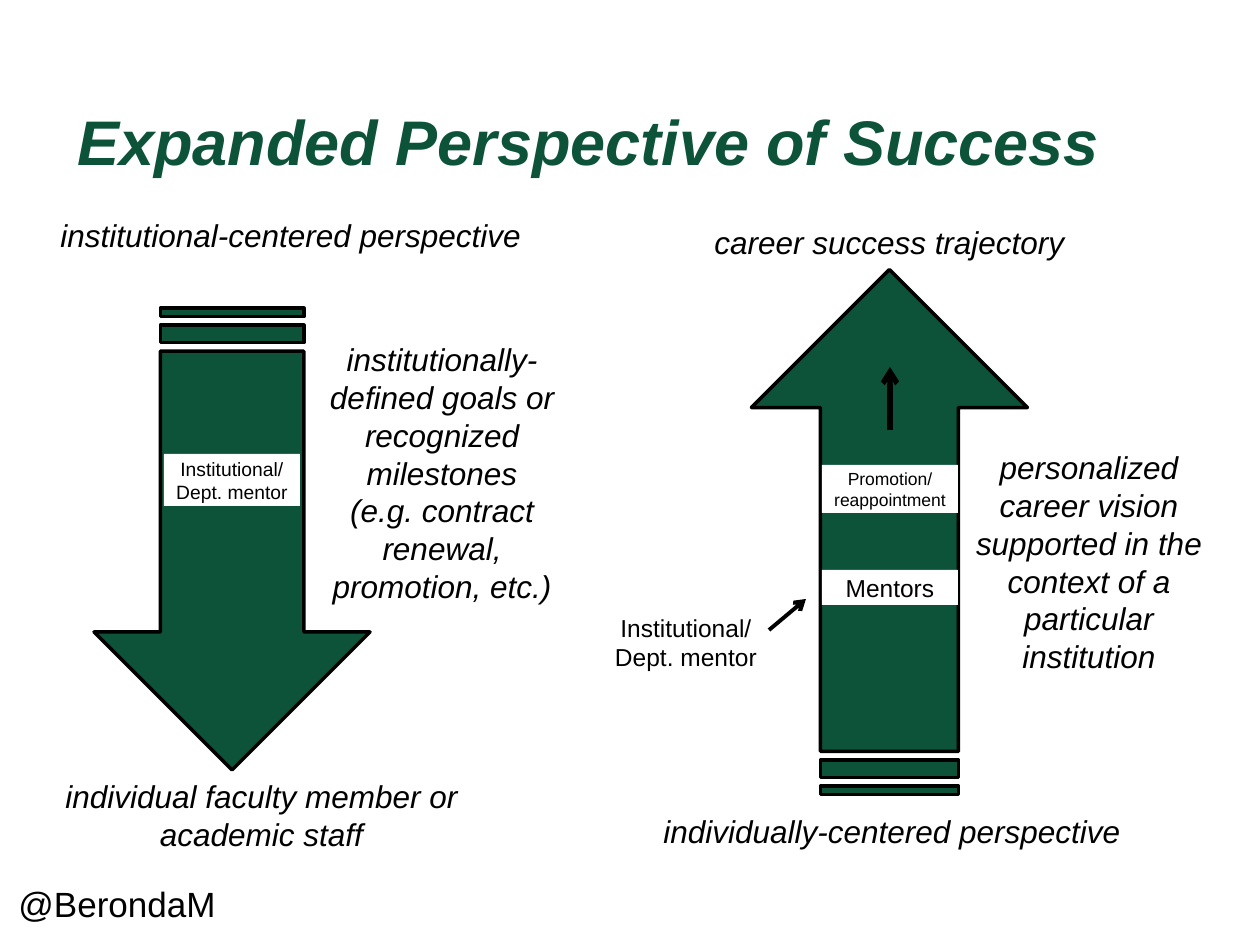
from lxml.etree import SubElement
from pptx import Presentation
from pptx.dml.color import RGBColor
from pptx.enum.shapes import MSO_CONNECTOR as Link, MSO_SHAPE as Shape
from pptx.enum.text import MSO_ANCHOR as Anchor, PP_ALIGN as Align
from pptx.oxml.ns import qn
from pptx.util import Emu, Pt

SCALE = 914400 / 126
GREEN, BLACK, WHITE = "0C533A", "000000", "FFFFFF"


def px(*nums):
    return [Emu(round(n * SCALE)) for n in nums]


def tint(code):
    return RGBColor.from_string(code)


class Deck:
    """Holds the style and the current slide, and draws each kind of element."""

    def __init__(self, slide, font="Arial"):
        self.shapes = slide.shapes
        self.font = font

    def text(self, box, lines, size=18, color=BLACK, bold=False, italic=True,
             align=Align.CENTER, inset=None, anchor=Anchor.TOP):
        self.fill_text(self.shapes.add_textbox(*px(*box)), lines, size, color,
                       bold, italic, align, inset, anchor)

    def label(self, box, lines, size):
        rect = self.shapes.add_shape(Shape.RECTANGLE, *px(*box))
        rect.shadow.inherit = False
        rect.fill.solid()
        rect.fill.fore_color.rgb = tint(WHITE)
        rect.line.fill.background()
        self.fill_text(rect, lines, size, BLACK, False, False,
                       Align.CENTER, 3, Anchor.TOP)

    def fill_text(self, shape, lines, size, color, bold, italic, align,
                  inset, anchor):
        frame = shape.text_frame
        frame.word_wrap = True
        frame.vertical_anchor = anchor
        if inset is not None:
            pad, = px(inset)
            frame.margin_left = frame.margin_right = pad
            frame.margin_top = frame.margin_bottom = pad
        frame.text = "\n".join(lines)
        for para in frame.paragraphs:
            para.alignment = align
            font = para.font
            font.name, font.size = self.font, Pt(size)
            font.bold, font.italic = bold, italic
            font.color.rgb = tint(color)

    def arrow(self, box, turn, shaft=0.5):
        arrow = self.shapes.add_shape(Shape.STRIPED_RIGHT_ARROW, *px(*box))
        arrow.shadow.inherit = False
        arrow.rotation = turn
        arrow.adjustments[0], arrow.adjustments[1] = shaft, 0.5
        arrow.fill.solid()
        arrow.fill.fore_color.rgb = tint(GREEN)
        arrow.line.color.rgb = tint(BLACK)
        arrow.line.width = Pt(2)

    def pointer(self, ends, width):
        link = self.shapes.add_connector(Link.STRAIGHT, *px(*ends))
        link.line.color.rgb = tint(BLACK)
        link.line.width = Pt(width)
        SubElement(link.line._get_or_add_ln(), qn("a:tailEnd"), type="arrow")
        SubElement(link._element.spPr, qn("a:effectLst"))


def main():
    show = Presentation()
    show.slide_width, show.slide_height = px(1260, 945)
    deck = Deck(show.slides.add_slide(show.slide_layouts[6]))
    mentor = ["Institutional/", "Dept. mentor"]

    deck.text((65, 100, 1134, 80), ["Expanded Perspective of Success"], 36,
              GREEN, bold=True, align=Align.LEFT, anchor=Anchor.MIDDLE)

    deck.text((48, 210, 499, 50), ["institutional-centered perspective"],
              align=Align.LEFT)
    deck.text((295, 334, 294, 280),
              ["institutionally-defined goals or recognized milestones",
               "(e.g. contract renewal, promotion, etc.)"])
    deck.arrow((1, 401, 462, 276), 90, 0.52)
    deck.label((164, 454, 136, 52), mentor, 11)
    deck.text((10, 771, 503, 89),
              ["individual faculty member or academic staff"])

    deck.text((651, 806, 495, 50), ["individually-centered perspective"],
              align=Align.LEFT)
    deck.text((949, 442, 280, 242),
              ["personalized career vision supported in the context of "
               "a particular institution"])
    deck.arrow((627, 394, 525, 276), 270)
    deck.text((576, 610, 220, 64), mentor, 14, italic=False, inset=3)
    deck.pointer((769, 630, 806, 599), 2.25)
    deck.label((822, 570, 136, 35), ["Mentors"], 14)
    deck.label((822, 465, 136, 48), ["Promotion/", "reappointment"], 10)
    deck.pointer((890, 430, 890, 367), 3)
    deck.text((695, 217, 389, 50), ["career success trajectory"])

    deck.text((6, 876, 224, 55), ["@BerondaM"], 20, italic=False,
              align=Align.LEFT)
    show.save("out.pptx")


if __name__ == "__main__":
    main()
